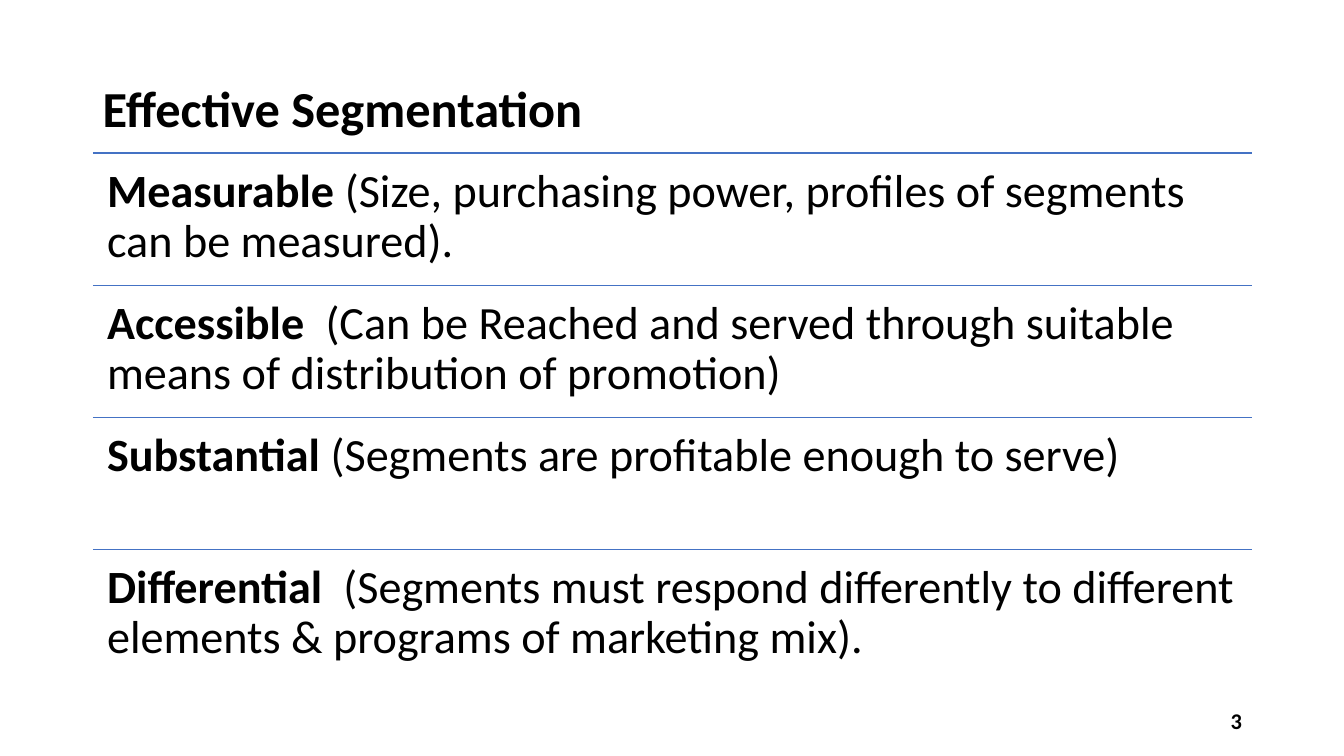
from dataclasses import dataclass

from lxml import etree
from pptx import Presentation
from pptx.dml.color import RGBColor
from pptx.enum.shapes import MSO_CONNECTOR
from pptx.enum.text import MSO_ANCHOR, PP_ALIGN
from pptx.oxml.ns import qn
from pptx.slide import Slide
from pptx.util import Cm, Pt

STRAIGHT = MSO_CONNECTOR.STRAIGHT
TOP, MIDDLE = MSO_ANCHOR.TOP, MSO_ANCHOR.MIDDLE
LEFT, RIGHT = PP_ALIGN.LEFT, PP_ALIGN.RIGHT

MARGIN = 2.34
CONTENT_WIDTH = 29.21
FIRST_ROW = 3.86
ROW_HEIGHT = 3.33
CRITERIA = [
    ("Measurable ", "(Size, purchasing power, profiles of segments can be measured)."),
    ("Accessible  ", "(Can be Reached and served through suitable means of distribution of promotion)"),
    ("Substantial ", "(Segments are profitable enough to serve)"),
    ("Differential ", " (Segments must respond differently to different elements & programs of marketing mix)."),
]


def color(value):
    return RGBColor.from_string(value)


def add_span(para, text, *, font, size, ink, bold=False):
    span = para.add_run()
    span.text = text
    span.font.name = font
    span.font.size = Pt(size)
    span.font.bold = bold
    span.font.color.rgb = color(ink)


@dataclass
class SlideBuilder:
    page: Slide
    font: str = "Calibri"
    ink: str = "000000"
    accent: str = "4472C4"

    def text(self, left, top, width, height, spans, *, size, anchor=TOP,
             align=LEFT, spacing=1.0, inset=(0.25, 0.13)):
        box = self.page.shapes.add_textbox(Cm(left), Cm(top), Cm(width), Cm(height))
        frame = box.text_frame
        frame.word_wrap = True
        frame.vertical_anchor = anchor
        frame.margin_left = frame.margin_right = Cm(inset[0])
        frame.margin_top = frame.margin_bottom = Cm(inset[1])
        para = frame.paragraphs[0]
        para.alignment = align
        para.line_spacing = spacing
        for words, bold in spans:
            add_span(para, words, font=self.font, size=size, ink=self.ink, bold=bold)

    def rule(self, left, top, width):
        line = self.page.shapes.add_connector(
            STRAIGHT, Cm(left), Cm(top), Cm(left + width), Cm(top))
        line.line.color.rgb = color(self.accent)
        line.line.width = Pt(1)
        etree.SubElement(line._element.spPr, qn("a:effectLst"))


def main():
    deck = Presentation()
    deck.slide_width, deck.slide_height = Cm(33.87), Cm(19.05)
    builder = SlideBuilder(deck.slides.add_slide(deck.slide_layouts[6]))

    builder.text(MARGIN, 0.97, CONTENT_WIDTH, 3.68, [("Effective Segmentation", True)],
                 size=36, anchor=MIDDLE, spacing=0.9)
    for index, (name, meaning) in enumerate(CRITERIA):
        top = FIRST_ROW + index * ROW_HEIGHT
        builder.rule(MARGIN, top, CONTENT_WIDTH)
        builder.text(MARGIN, top, CONTENT_WIDTH, ROW_HEIGHT, [(name, True), (meaning, False)],
                     size=33, spacing=0.9, inset=(0.36, 0.36))
    builder.text(23.93, 17.65, 7.62, 1.02, [("3", True)],
                 size=16, anchor=MIDDLE, align=RIGHT)

    deck.save("out.pptx")


if __name__ == "__main__":
    main()
